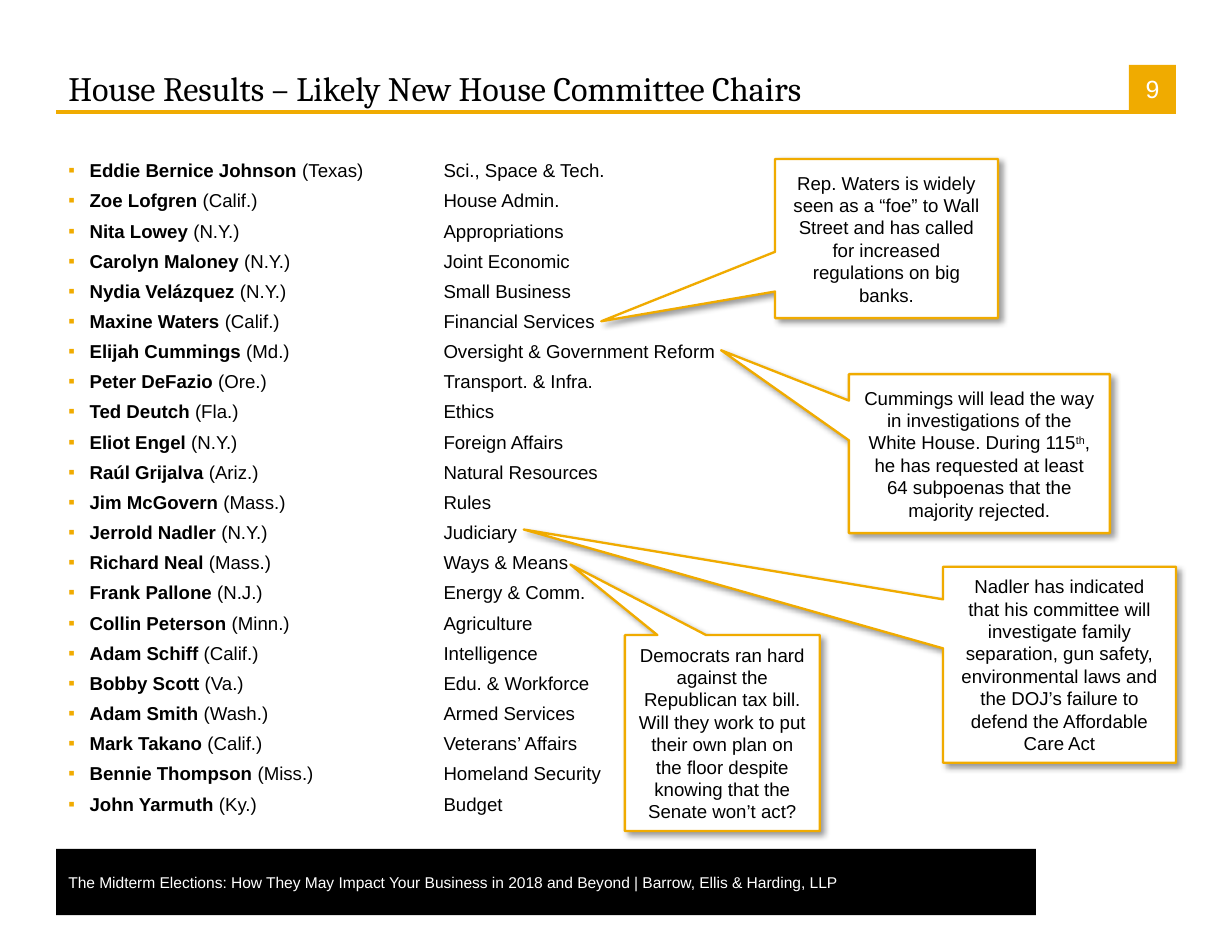
from dataclasses import dataclass

from lxml import etree
from pptx import Presentation
from pptx.dml.color import RGBColor
from pptx.enum.shapes import MSO_CONNECTOR, MSO_SHAPE
from pptx.enum.text import MSO_ANCHOR, MSO_AUTO_SIZE, PP_ALIGN
from pptx.oxml.ns import qn
from pptx.util import Emu, Pt

RECT = MSO_SHAPE.RECTANGLE
CALLOUT = MSO_SHAPE.RECTANGULAR_CALLOUT
STRAIGHT = MSO_CONNECTOR.STRAIGHT
MIDDLE, BOTTOM, TOP = MSO_ANCHOR.MIDDLE, MSO_ANCHOR.BOTTOM, MSO_ANCHOR.TOP
LEFT, CENTER = PP_ALIGN.LEFT, PP_ALIGN.CENTER
NO_FIT = MSO_AUTO_SIZE.NONE

EMU_PER_PX = 9144
COLORS = {"gold": "F0AB00", "black": "000000", "white": "FFFFFF"}
INDENT = 19
COMMITTEE_TAB = 335


@dataclass
class Chair:
    name: str
    state: str
    committee: str


@dataclass
class Callout:
    box: tuple[int, int, int, int]
    tip: tuple[float, float]
    runs: list[str]


CHAIRS = [
    Chair("Eddie Bernice Johnson", "Texas", "Sci., Space & Tech."),
    Chair("Zoe Lofgren", "Calif.", "House Admin."),
    Chair("Nita Lowey", "N.Y.", "Appropriations"),
    Chair("Carolyn Maloney", "N.Y.", "Joint Economic"),
    Chair("Nydia Velázquez", "N.Y.", "Small Business"),
    Chair("Maxine Waters", "Calif.", "Financial Services"),
    Chair("Elijah Cummings", "Md.", "Oversight & Government Reform"),
    Chair("Peter DeFazio", "Ore.", "Transport. & Infra."),
    Chair("Ted Deutch", "Fla.", "Ethics"),
    Chair("Eliot Engel", "N.Y.", "Foreign Affairs"),
    Chair("Raúl Grijalva", "Ariz.", "Natural Resources"),
    Chair("Jim McGovern", "Mass.", "Rules"),
    Chair("Jerrold Nadler", "N.Y.", "Judiciary"),
    Chair("Richard Neal", "Mass.", "Ways & Means"),
    Chair("Frank Pallone", "N.J.", "Energy & Comm."),
    Chair("Collin Peterson", "Minn.", "Agriculture"),
    Chair("Adam Schiff", "Calif.", "Intelligence"),
    Chair("Bobby Scott", "Va.", "Edu. & Workforce"),
    Chair("Adam Smith", "Wash.", "Armed Services"),
    Chair("Mark Takano", "Calif.", "Veterans’ Affairs"),
    Chair("Bennie Thompson", "Miss.", "Homeland Security"),
    Chair("John Yarmuth", "Ky.", "Budget"),
]

CALLOUTS = [
    Callout((758, 334, 233, 142), (-0.99, -0.65), [
        "Cummings will lead the way in investigations of the White House. During 115",
        "th",
        ", he has requested at least 64 subpoenas that the majority rejected."]),
    Callout((692, 142, 199, 142), (-1.28, 0.52), [
        "Rep. Waters is widely seen as a “foe” to Wall Street and has called "
        "for increased regulations on big banks."]),
    Callout((842, 506, 208, 175), (-2.3, -0.69), [
        "Nadler has indicated that his committee will investigate family separation, "
        "gun safety, environmental laws and the DOJ’s failure to defend the "
        "Affordable Care Act"]),
    Callout((558, 567, 174, 175), (-0.78, -0.86), [
        "Democrats ran hard against the Republican tax bill. Will they work to put "
        "their own plan on the floor despite knowing that the Senate won’t act?"]),
]


def px(n: int) -> Emu:
    return Emu(n * EMU_PER_PX)


def rgb(name: str) -> RGBColor:
    return RGBColor.from_string(COLORS[name])


def place(sp, box: tuple[int, int, int, int]) -> None:
    sp.left, sp.top, sp.width, sp.height = map(px, box)


def frame(sp, anchor, insets: tuple[int, int, int, int]):
    tf = sp.text_frame
    tf.word_wrap = True
    tf.auto_size = NO_FIT
    tf.vertical_anchor = anchor
    tf.margin_left, tf.margin_top, tf.margin_right, tf.margin_bottom = map(px, insets)
    return tf


def add_run(p, text: str, size: int, color: str = "black", font: str = "Arial", bold: bool = False):
    r = p.add_run()
    r.text = text
    r.font.size = Pt(size)
    r.font.name = font
    r.font.bold = bold
    r.font.color.rgb = rgb(color)
    return r


def add_box(s, kind, box: tuple[int, int, int, int], fill: str):
    sp = s.shapes.add_shape(kind, *map(px, box))
    sp.shadow.inherit = False
    sp.fill.solid()
    sp.fill.fore_color.rgb = rgb(fill)
    sp.line.fill.background()
    return sp


def add_rule(s, x1: int, y: int, x2: int) -> None:
    line = s.shapes.add_connector(STRAIGHT, px(x1), px(y), px(x2), px(y))
    line.line.color.rgb = rgb("gold")
    line.line.width = Pt(2)
    etree.SubElement(line._element.spPr, qn("a:effectLst"))


def add_shadow(sp) -> None:
    effects = sp._element.spPr.find(qn("a:effectLst"))
    shadow = etree.SubElement(effects, qn("a:outerShdw"), blurRad=str(Pt(4)),
                              dist=str(Pt(3)), dir="2700000", algn="tl", rotWithShape="0")
    color = etree.SubElement(shadow, qn("a:srgbClr"), val=COLORS["black"])
    etree.SubElement(color, qn("a:alpha"), val="40000")


def add_callout(s, callout: Callout) -> None:
    sp = add_box(s, CALLOUT, callout.box, "white")
    sp.adjustments[0], sp.adjustments[1] = callout.tip
    sp.line.color.rgb = rgb("gold")
    sp.line.width = Pt(1.5)
    add_shadow(sp)
    p = frame(sp, MIDDLE, (12, 6, 12, 6)).paragraphs[0]
    p.alignment = CENTER
    for i, text in enumerate(callout.runs):
        r = add_run(p, text, 12)
        if i == 1:
            r.font._element.set("baseline", "30000")


def add_chair(p, chair: Chair) -> None:
    pPr = p._p.get_or_add_pPr()
    pPr.set("marL", str(px(INDENT)))
    pPr.set("indent", str(px(-INDENT)))
    color = etree.SubElement(pPr, qn("a:buClr"))
    etree.SubElement(color, qn("a:srgbClr"), val=COLORS["gold"])
    etree.SubElement(pPr, qn("a:buFont"), typeface="Arial")
    etree.SubElement(pPr, qn("a:buChar"), char="▪")
    tabs = etree.SubElement(pPr, qn("a:tabLst"))
    etree.SubElement(tabs, qn("a:tab"), pos=str(px(COMMITTEE_TAB)), algn="l")
    p.alignment = LEFT
    p.space_before = Pt(0)
    p.space_after = Pt(5)
    add_run(p, chair.name, 12, bold=True)
    add_run(p, f" ({chair.state})\t{chair.committee}", 12)


def main() -> None:
    prs = Presentation()
    prs.slide_width, prs.slide_height = px(1100), px(850)
    s = prs.slides.add_slide(prs.slide_layouts[1])
    title, body = s.placeholders

    add_box(s, RECT, (50, 758, 875, 59), "black")
    add_rule(s, 50, 100, 1050)
    number = add_box(s, RECT, (1008, 58, 42, 42), "gold")
    p = frame(number, MIDDLE, (0, 0, 0, 0)).paragraphs[0]
    p.alignment = CENTER
    add_run(p, "9", 16, "white")

    place(title, (50, 55, 958, 48))
    p = frame(title, BOTTOM, (11, 6, 11, 6)).paragraphs[0]
    p.alignment = LEFT
    add_run(p, "House Results – Likely New House Committee Chairs", 22, font="Cambria")

    place(body, (50, 142, 637, 625))
    tf = frame(body, TOP, (11, 0, 11, 6))
    for i, chair in enumerate(CHAIRS):
        add_chair(tf.add_paragraph() if i else tf.paragraphs[0], chair)

    footer = s.shapes.add_textbox(*map(px, (50, 775, 808, 25)))
    p = frame(footer, MIDDLE, (11, 0, 0, 0)).paragraphs[0]
    add_run(p, "The Midterm Elections: How They May Impact Your Business in 2018 and Beyond"
               " | Barrow, Ellis & Harding, LLP", 10, "white")

    for callout in CALLOUTS:
        add_callout(s, callout)

    prs.save("out.pptx")


if __name__ == "__main__":
    main()
